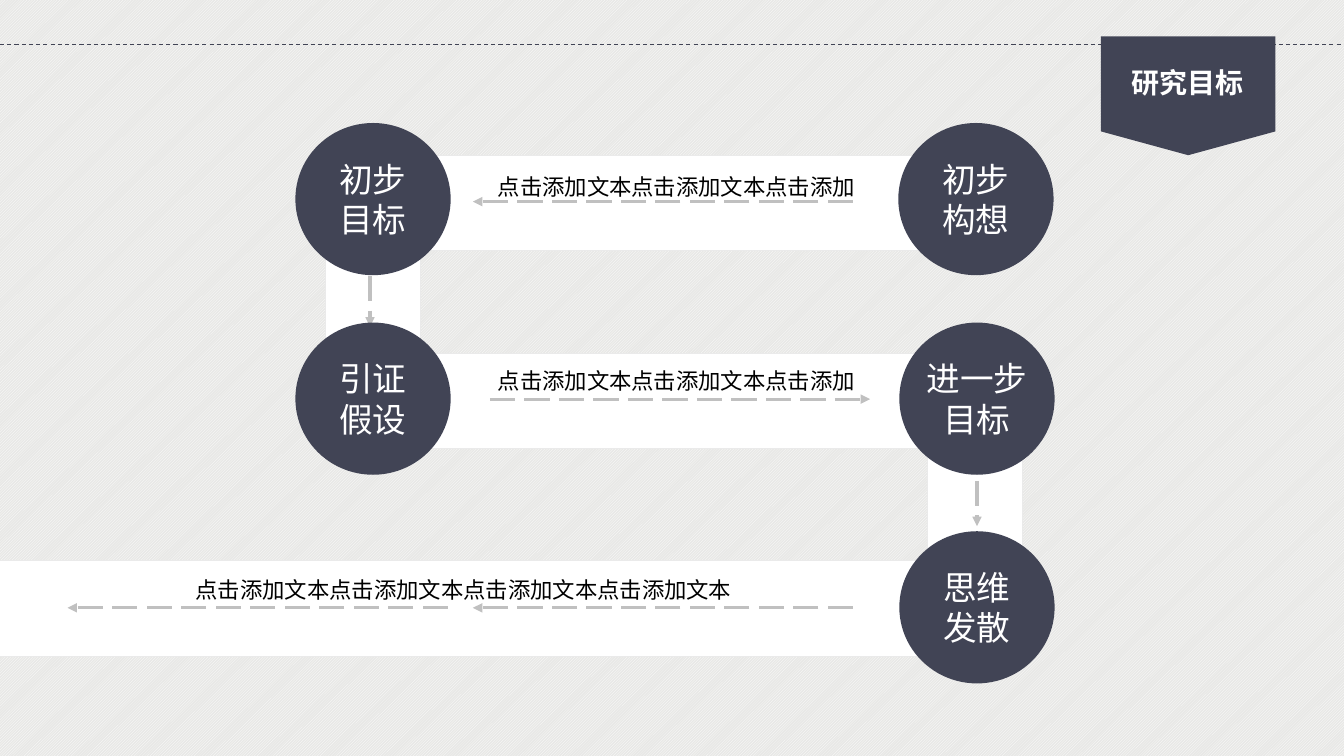
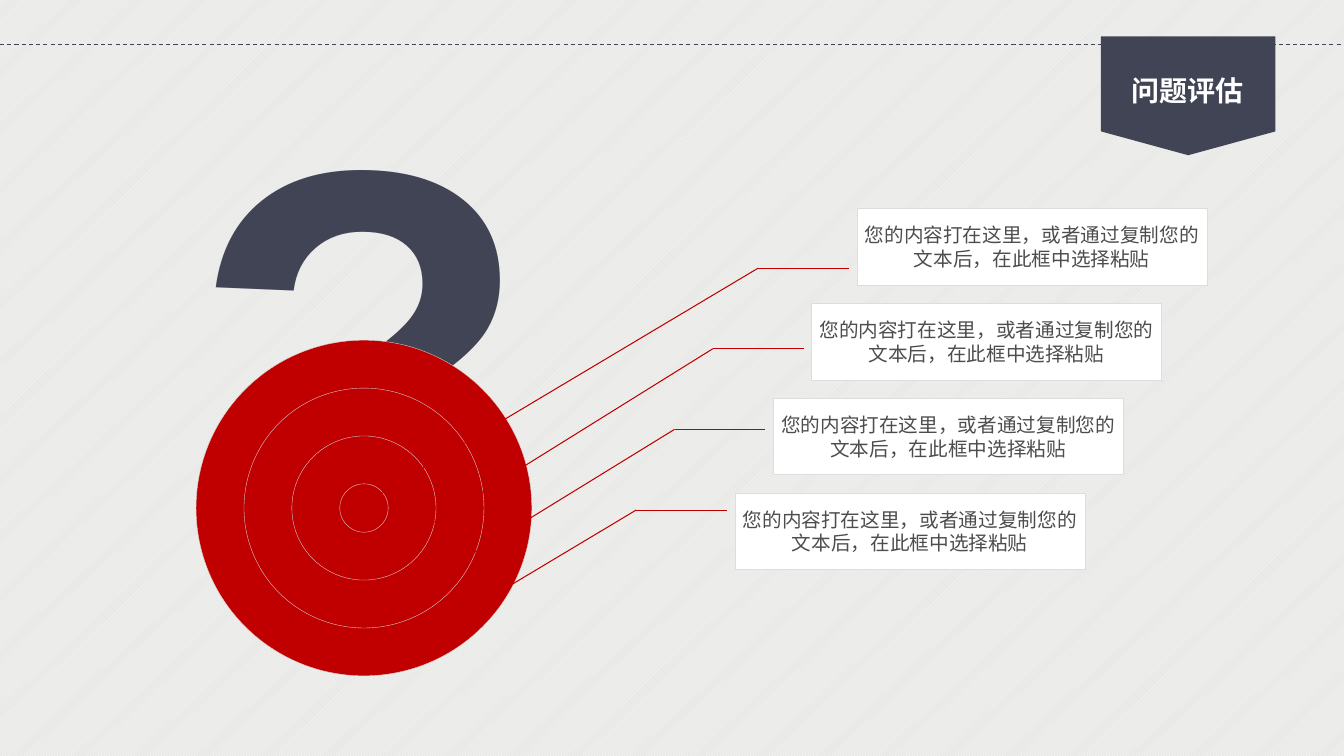
"""Build two slides: a flow of research goals and a problem assessment."""
import lxml.etree
import pptx
import pptx.dml.color
import pptx.enum.dml
import pptx.enum.shapes
import pptx.enum.text
import pptx.oxml.ns
import pptx.util

Inches = pptx.util.Inches
Pt = pptx.util.Pt
Color = pptx.dml.color.RGBColor
Shape = pptx.enum.shapes.MSO_SHAPE
Dash = pptx.enum.dml.MSO_LINE
Align = pptx.enum.text.PP_ALIGN
Anchor = pptx.enum.text.MSO_ANCHOR
AutoSize = pptx.enum.text.MSO_AUTO_SIZE

NAVY = Color(0x41, 0x44, 0x55)
RED = Color(0xC0, 0x00, 0x00)
WHITE = Color(0xFF, 0xFF, 0xFF)
BLACK = Color(0x00, 0x00, 0x00)
PAPER = Color(0xE8, 0xE8, 0xE6)
BAND_EDGE = Color(0xEA, 0xEA, 0xEA)
RING_EDGE = Color(0xD7, 0xD7, 0xD7)
NOTE_EDGE = Color(0xDD, 0xDD, 0xDD)
ARROW_GRAY = Color(0xC0, 0xC0, 0xC0)
NOTE_GRAY = Color(0x4D, 0x4D, 0x4D)
HAN_FONT = "Noto Sans CJK SC"
STEP_FONT = "Calibri"
MARK_FONT = "Arial"

PAGE_WIDTH, PAGE_HEIGHT = 13.33, 7.5

BANDS = [
    (0, 5.56, 10.14, 0.95),
    (3.58, 3.51, 6.55, 0.94),
    (9.2, 3.97, 0.94, 2.59),
    (4.12, 1.54, 6.01, 0.95),
    (3.23, 1.53, 0.94, 2.92),
]
ARROWS = [
    (8.46, 2, 4.69, 2),
    (3.67, 2.74, 3.67, 3.24),
    (4.86, 3.96, 8.63, 3.96),
    (9.69, 4.77, 9.69, 5.22),
    (8.46, 6.03, 4.69, 6.03),
    (4.44, 6.03, 0.67, 6.03),
]
STEPS = [
    ("初步\n构想", 8.91, 1.22),
    ("初步\n目标", 2.93, 1.22),
    ("引证\n假设", 2.93, 3.2),
    ("进一步\n目标", 8.92, 3.2),
    ("思维\n发散", 8.92, 5.27),
]
STEP_SIZE = (1.54, 1.51)
PROMPT = "点击添加文本"
CAPTIONS = [
    (PROMPT * 2 + "点击添加", 4.72, 1.53, 3.98),
    (PROMPT * 2 + "点击添加", 4.72, 3.46, 3.98),
    (PROMPT * 4, 0.74, 5.53, 7.72),
]
CAPTION_HEIGHT = 0.5

NOTE_TEXT = "您的内容打在这里，或者通过复制您的文本后，在此框中选择粘贴"
NOTES = [
    (8.5, (3.58, 5.01)),
    (8.05, (3.97, 5.39)),
    (7.67, (4.3, 5.73)),
    (7.29, (4.64, 6.06)),
]
NOTE_TOP, NOTE_STEP, NOTE_SIZE = 2.07, 0.94, (3.47, 0.76)
ELBOW_TOP, ELBOW_STEP = 2.66, 0.8
ELBOW_OFFSET, LEAD_GAP = 0.98, 0.08
TARGET_CENTER = (3.61, 5.04)
RING_COUNT, RING_OUTER, RING_STEP = 4, 3.33, 0.95


def write(shape, text, font=HAN_FONT, size=16, color=BLACK, bold=False,
          align=Align.CENTER, anchor=Anchor.MIDDLE, wrap=True,
          spacing=None, inset=None, grow=False):
    """Write text into a shape, one paragraph per line."""
    frame = shape.text_frame
    frame.text = text
    frame.word_wrap = wrap
    frame.vertical_anchor = anchor
    frame.auto_size = AutoSize.SHAPE_TO_FIT_TEXT if grow else AutoSize.NONE
    if inset is not None:
        frame.margin_left = frame.margin_right = Inches(inset)
        frame.margin_top = frame.margin_bottom = Inches(inset)
    for para in frame.paragraphs:
        para.alignment = align
        para.line_spacing = spacing
        for span in para.runs:
            span.font.name = font
            span.font.size = Pt(size)
            span.font.bold = bold
            span.font.color.rgb = color


def add_box(page, kind, left, top, width, height, fill, edge=None, weight=0.75):
    """Add a filled preset shape, outlined when an edge colour is given."""
    box = page.shapes.add_shape(
        kind, Inches(left), Inches(top), Inches(width), Inches(height))
    box.shadow.inherit = False
    box.fill.solid()
    box.fill.fore_color.rgb = fill
    if edge is None:
        box.line.fill.background()
    else:
        box.line.color.rgb = edge
        box.line.width = Pt(weight)
    return box


def add_text_box(page, text, left, top, width, height, **style):
    """Add a text box that grows with its text."""
    box = page.shapes.add_textbox(
        Inches(left), Inches(top), Inches(width), Inches(height))
    write(box, text, grow=True, **style)


def add_line(page, start, end, color, weight=0.75, dash=None, arrow=False):
    """Add a straight line, with an arrowhead at its end on request."""
    line = page.shapes.add_connector(
        pptx.enum.shapes.MSO_CONNECTOR.STRAIGHT,
        *[Inches(value) for value in (*start, *end)])
    line.line.color.rgb = color
    line.line.width = Pt(weight)
    if dash is not None:
        line.line.dash_style = dash
    if arrow:
        lxml.etree.SubElement(line.line._get_or_add_ln(),
                              pptx.oxml.ns.qn("a:tailEnd"), type="triangle")
    lxml.etree.SubElement(line.element.spPr, pptx.oxml.ns.qn("a:effectLst"))


def add_page(deck, heading, heading_top):
    """Add a slide with the dashed rule and the heading on its ribbon."""
    page = deck.slides.add_slide(deck.slide_layouts[5])
    add_line(page, (0, 0.44), (PAGE_WIDTH, 0.44), NAVY, dash=Dash.DASH)
    add_box(page, Shape.FLOWCHART_OFFPAGE_CONNECTOR, 10.92, 0.36, 1.73, 1.18, NAVY)
    title = page.shapes.title
    title.left, title.top = Inches(11.12), Inches(heading_top)
    title.width, title.height = Inches(1.32), Inches(0.44)
    write(title, heading, size=20, color=WHITE, bold=True,
          anchor=Anchor.TOP, wrap=False, grow=True)
    page.shapes.element.append(title.element)
    return page


def build_goals(deck):
    """Draw the chain of steps linked by bands and arrows."""
    page = add_page(deck, "研究目标", 0.6)
    for band in BANDS:
        add_box(page, Shape.RECTANGLE, *band, WHITE, BAND_EDGE)
    for left, top, right, bottom in ARROWS:
        add_line(page, (left, top), (right, bottom), ARROW_GRAY, 2.25,
                 Dash.LONG_DASH, arrow=True)
    for text, left, top in STEPS:
        circle = add_box(page, Shape.OVAL, left, top, *STEP_SIZE, NAVY)
        write(circle, text, font=STEP_FONT, size=24, color=WHITE, wrap=False)
    for text, left, top, width in CAPTIONS:
        add_text_box(page, text, left, top, width, CAPTION_HEIGHT, spacing=1.5)


def build_assessment(deck):
    """Draw the question mark with its target and the four notes."""
    page = add_page(deck, "问题评估", 0.68)
    add_text_box(page, "?", 1.79, -0.07, 3.63, 6.83, font=MARK_FONT, size=400,
                 color=NAVY, bold=True, align=Align.LEFT, wrap=False)
    center_x, center_y = TARGET_CENTER
    for index in range(RING_COUNT):
        size = RING_OUTER - index * RING_STEP
        add_box(page, Shape.OVAL, center_x - size / 2, center_y - size / 2,
                size, size, RED, RING_EDGE, 0.25)
    for index, (left, target) in enumerate(NOTES):
        elbow = (left - ELBOW_OFFSET, ELBOW_TOP + index * ELBOW_STEP)
        add_line(page, elbow, (left - LEAD_GAP, elbow[1]), RED)
        add_line(page, elbow, target, RED)
        note = add_box(page, Shape.RECTANGLE, left, NOTE_TOP + index * NOTE_STEP,
                       *NOTE_SIZE, WHITE, NOTE_EDGE, 0.25)
        write(note, NOTE_TEXT, size=14, color=NOTE_GRAY, inset=0)


def main():
    """Set up the deck, build both slides and save."""
    deck = pptx.Presentation()
    deck.slide_width, deck.slide_height = Inches(PAGE_WIDTH), Inches(PAGE_HEIGHT)
    backdrop = deck.slide_master.background.fill
    backdrop.patterned()
    backdrop.pattern = pptx.enum.dml.MSO_PATTERN.LIGHT_UPWARD_DIAGONAL
    backdrop.fore_color.rgb = WHITE
    backdrop.back_color.rgb = PAPER
    build_goals(deck)
    build_assessment(deck)
    deck.save("out.pptx")


if __name__ == "__main__":
    main()
